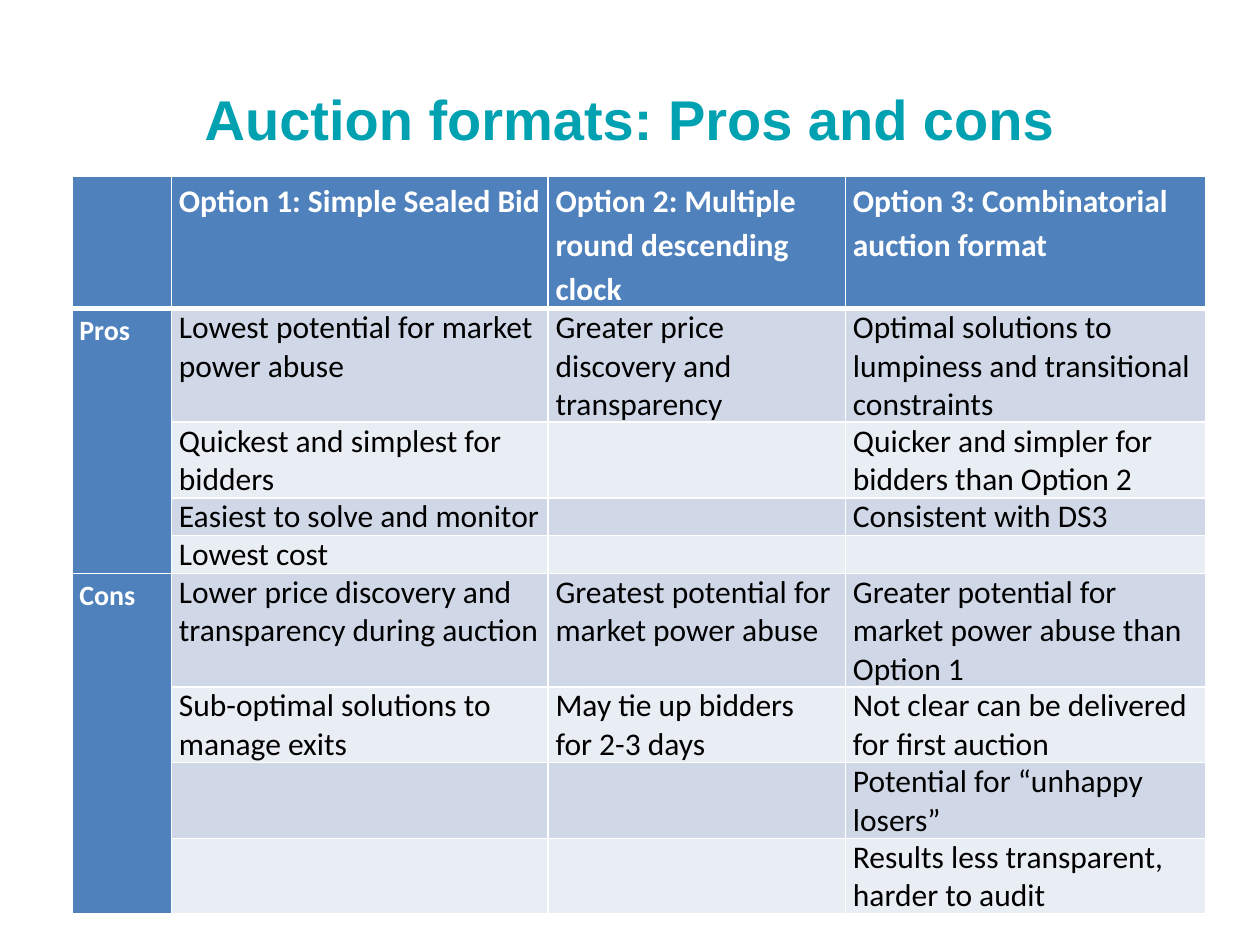
from dataclasses import dataclass

from lxml import etree
from pptx import Presentation
from pptx.dml.color import RGBColor
from pptx.enum.text import MSO_ANCHOR, PP_ALIGN
from pptx.oxml.ns import qn
from pptx.util import Inches, Pt

CENTER, LEFT = PP_ALIGN.CENTER, PP_ALIGN.LEFT
MIDDLE, TOP = MSO_ANCHOR.MIDDLE, MSO_ANCHOR.TOP


@dataclass(frozen=True)
class Theme:
    teal: str = "00A1B1"
    blue: str = "4F81BD"
    bands: tuple = ("D0D8E8", "E9EDF4")
    white: str = "FFFFFF"
    black: str = "000000"
    head: str = "Arial"
    body: str = "Calibri"
    title: int = 32
    text: int = 18
    side: int = 16
    thin: int = 1
    thick: int = 3


class Deck:
    def __init__(self, theme, width, height):
        self.theme = theme
        self.prs = Presentation()
        self.prs.slide_width, self.prs.slide_height = Inches(width), Inches(height)
        self.slide = self.prs.slides.add_slide(self.prs.slide_layouts[6])

    def box(self, x, y, w, h):
        """Turn shares of the slide into lengths."""
        wide, high = self.prs.slide_width, self.prs.slide_height
        return int(x * wide), int(y * high), int(w * wide), int(h * high)

    def label(self, frame, text, font, size, color, bold, align=LEFT, **gaps):
        para = frame.paragraphs[0]
        for name, value in {"alignment": align, **gaps}.items():
            setattr(para, name, value)
        run = para.add_run()
        run.text = text
        for name, value in {"name": font, "size": Pt(size), "bold": bold}.items():
            setattr(run.font, name, value)
        run.font.color.rgb = RGBColor.from_string(color)

    def title(self, text, *place):
        frame = self.slide.shapes.add_textbox(*self.box(*place)).text_frame
        frame.word_wrap, frame.vertical_anchor = True, MIDDLE
        look = self.theme
        self.label(frame, text, look.head, look.title, look.teal, True, CENTER)

    def edge(self, cell, **widths):
        props = cell._tc.get_or_add_tcPr()
        for spot, side in enumerate("LRTB"):
            width = Pt(widths.get(side, self.theme.thin))
            line = etree.Element(qn(f"a:ln{side}"), w=str(int(width)))
            fill = etree.SubElement(line, qn("a:solidFill"))
            etree.SubElement(fill, qn("a:srgbClr"), val=self.theme.white)
            props.insert(spot, line)

    def cell(self, cell, text, fill, head, size, **edges):
        look = self.theme
        pads = {"margin_left": Inches(0.06), "margin_right": Inches(0.06),
                "margin_top": 0, "margin_bottom": 0, "vertical_anchor": TOP}
        for name, value in pads.items():
            setattr(cell, name, value)
        cell.fill.solid()
        cell.fill.fore_color.rgb = RGBColor.from_string(fill)
        self.edge(cell, **edges)
        if text:
            color = look.white if head else look.black
            gaps = {"space_after": Pt(10 if head else 6)}
            if head:
                gaps["line_spacing"] = 1.15
            self.label(cell.text_frame, text, look.body, size, color, head, **gaps)

    def table(self, x, y, cols, rows, data, groups):
        look = self.theme
        place = self.box(x, y, sum(cols), sum(rows))
        grid = self.slide.shapes.add_table(len(rows), len(cols), *place).table
        for col, share in zip(grid.columns, cols):
            col.width = int(share * self.prs.slide_width)
        for row, share in zip(grid.rows, rows):
            row.height = int(share * self.prs.slide_height)
        for r, line in enumerate(data):
            edges = {0: {"B": look.thick}, 1: {"T": look.thick}}.get(r, {})
            for c, text in enumerate(line):
                head = r == 0 or c == 0
                fill = look.blue if head else look.bands[(r - 1) % 2]
                size = look.side if c == 0 else look.text
                self.cell(grid.cell(r, c), text, fill, head, size, **edges)
        for first, last in groups:
            grid.cell(first, 0).merge(grid.cell(last, 0))


DATA = [
    ("", "Option 1: Simple Sealed Bid", "Option 2: Multiple round descending clock",
     "Option 3: Combinatorial auction format"),
    ("Pros", "Lowest potential for market power abuse",
     "Greater price discovery and transparency",
     "Optimal solutions to lumpiness and transitional constraints"),
    ("", "Quickest and simplest for bidders", "",
     "Quicker and simpler for bidders than Option 2"),
    ("", "Easiest to solve and monitor", "", "Consistent with DS3"),
    ("", "Lowest cost", "", ""),
    ("Cons", "Lower price discovery and transparency during auction",
     "Greatest potential for market power abuse",
     "Greater potential for market power abuse than Option 1"),
    ("", "Sub-optimal solutions to manage exits", "May tie up bidders for 2-3 days",
     "Not clear can be delivered for first auction"),
    ("", "", "", "Potential for “unhappy losers”"),
    ("", "", "", "Results less transparent, harder to audit"),
]


def main():
    wide, high = 10, 7.5
    deck = Deck(Theme(), wide, high)

    # Title
    deck.title("Auction formats: Pros and cons", 0.05, 0.04, 0.9, 0.17)

    # Table: each body row is as high as its count of text lines
    cols = [w / wide for w in (0.79, 2.99, 2.36, 2.86)]
    lines = (3, 2, 1, 1, 3, 2, 2, 2)
    rows = [1.05 / high] + [0.3 * n / high for n in lines]
    deck.table(0.57 / wide, 1.4 / high, cols, rows, DATA, [(1, 4), (5, 8)])

    deck.prs.save("out.pptx")


if __name__ == "__main__":
    main()
